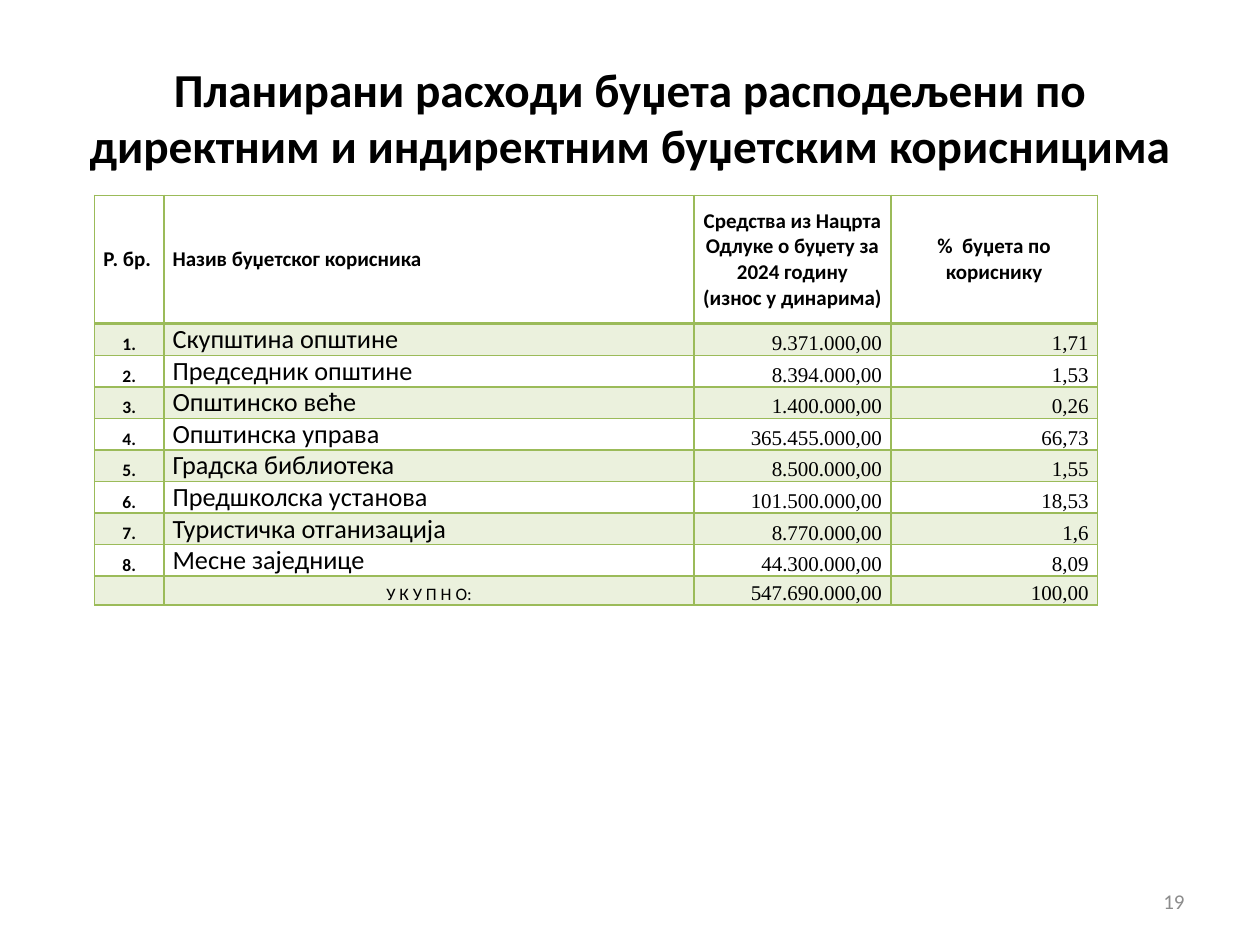
from lxml.etree import SubElement
from pptx import Presentation
from pptx.dml.color import RGBColor
from pptx.enum.text import MSO_ANCHOR, PP_ALIGN
from pptx.oxml.ns import qn
from pptx.util import Inches, Pt

BLACK = RGBColor(0, 0, 0)
GREY = RGBColor(0x8C, 0x8C, 0x8C)
GREEN = RGBColor(0x9B, 0xBB, 0x59)
BAND_ALPHA = 20

TITLE = "Планирани расходи буџета расподељени по директним и индиректним буџетским корисницима"
PAGE_NUMBER = "19"
HEADERS = [
    "Р. бр.",
    "Назив буџетског корисника",
    "Средства из Нацрта Одлуке о буџету за 2024 годину\v(износ у динарима)",
    "%  буџета по кориснику",
]
BENEFICIARIES = [
    ("Скупштина општине", "9.371.000,00", "1,71"),
    ("Председник општине", "8.394.000,00", "1,53"),
    ("Општинско веће", "1.400.000,00", "0,26"),
    ("Општинска управа", "365.455.000,00", "66,73"),
    ("Градска библиотека", "8.500.000,00", "1,55"),
    ("Предшколска установа", "101.500.000,00", "18,53"),
    ("Туристичка отганизација", "8.770.000,00", "1,6"),
    ("Месне заједнице", "44.300.000,00", "8,09"),
]
TOTAL = ("", "У К У П Н О:", "547.690.000,00", "100,00")

COLUMN_WIDTHS = [0.55, 4.21, 1.56, 1.64]
HEADER_HEIGHT, ROW_HEIGHT, TOTAL_HEIGHT = 1.02, 0.25, 0.23

LEFT, CENTER, RIGHT = PP_ALIGN.LEFT, PP_ALIGN.CENTER, PP_ALIGN.RIGHT
HEADER_ALIGNMENTS = [LEFT, LEFT, CENTER, CENTER]
BODY_ALIGNMENTS = [CENTER, LEFT, RIGHT, RIGHT]
TOTAL_ALIGNMENTS = [CENTER, CENTER, RIGHT, RIGHT]

TITLE_FONT = {"name": "Calibri", "size": Pt(27), "bold": True}
HEADER_FONT = {"name": "Calibri", "size": Pt(12), "bold": True}
NUMBER_FONT = {"name": "Calibri", "size": Pt(10), "bold": True}
NAME_FONT = {"name": "Calibri", "size": Pt(15), "bold": False}
AMOUNT_FONT = {"name": "Times New Roman", "size": Pt(12), "bold": False}
TOTAL_FONT = {"name": "Calibri", "size": Pt(10), "bold": False}
PAGE_FONT = {"name": "Calibri", "size": Pt(12), "bold": False}
BODY_FONTS = [NUMBER_FONT, NAME_FONT, AMOUNT_FONT, AMOUNT_FONT]
TOTAL_FONTS = [NUMBER_FONT, TOTAL_FONT, AMOUNT_FONT, AMOUNT_FONT]


def write_text(text_frame, text, font_format, alignment, color=BLACK):
    text_frame.word_wrap = True
    text_frame.text = text
    paragraph = text_frame.paragraphs[0]
    paragraph.alignment = alignment
    for run in paragraph.runs:
        for attribute, value in font_format.items():
            setattr(run.font, attribute, value)
        run.font.color.rgb = color
    if not text:
        size = str(int(font_format["size"].pt * 100))
        SubElement(paragraph._p, qn("a:endParaRPr"), sz=size)


def add_text(slide, box, text, font_format, alignment, color=BLACK):
    shape = slide.shapes.add_textbox(*(Inches(length) for length in box))
    shape.text_frame.vertical_anchor = MSO_ANCHOR.MIDDLE
    write_text(shape.text_frame, text, font_format, alignment, color)


def set_borders(cell, widths):
    properties = cell._tc.get_or_add_tcPr()
    for side, width in widths.items():
        line = SubElement(properties, qn(f"a:ln{side}"), w=str(Pt(width)))
        fill = SubElement(line, qn("a:solidFill"))
        SubElement(fill, qn("a:srgbClr"), val=str(GREEN))


def set_band(cell, banded):
    if not banded:
        cell.fill.background()
        return
    cell.fill.solid()
    cell.fill.fore_color.rgb = GREEN
    color = cell._tc.tcPr.find(f"{qn('a:solidFill')}/{qn('a:srgbClr')}")
    SubElement(color, qn("a:alpha"), val=str(BAND_ALPHA * 1000))


def add_budget_table(slide):
    rows = [(HEADERS, [HEADER_FONT] * 4, HEADER_ALIGNMENTS, HEADER_HEIGHT)]
    for number, beneficiary in enumerate(BENEFICIARIES, 1):
        rows.append(((f"{number}.", *beneficiary), BODY_FONTS, BODY_ALIGNMENTS, ROW_HEIGHT))
    rows.append((TOTAL, TOTAL_FONTS, TOTAL_ALIGNMENTS, TOTAL_HEIGHT))

    height = sum(row[-1] for row in rows)
    table = slide.shapes.add_table(
        len(rows), len(COLUMN_WIDTHS), Inches(0.75), Inches(1.55),
        Inches(sum(COLUMN_WIDTHS)), Inches(height),
    ).table
    for column, width in zip(table.columns, COLUMN_WIDTHS):
        column.width = Inches(width)

    for row_index, (texts, fonts, alignments, row_height) in enumerate(rows):
        table.rows[row_index].height = Inches(row_height)
        is_header = row_index == 0
        cell_format = {
            "margin_left": Inches(0.07),
            "margin_right": Inches(0.07),
            "margin_top": 0,
            "margin_bottom": 0,
            "vertical_anchor": MSO_ANCHOR.MIDDLE if is_header else MSO_ANCHOR.BOTTOM,
        }
        borders = {"L": 1, "R": 1, "T": 2 if row_index == 1 else 1, "B": 2 if is_header else 1}
        for column_index, content in enumerate(zip(texts, fonts, alignments)):
            cell = table.cell(row_index, column_index)
            for attribute, value in cell_format.items():
                setattr(cell, attribute, value)
            write_text(cell.text_frame, *content)
            set_borders(cell, borders)
            set_band(cell, row_index % 2 == 1)


def main():
    presentation = Presentation()
    presentation.slide_width = Inches(10)
    presentation.slide_height = Inches(7.5)
    slide = presentation.slides.add_slide(presentation.slide_layouts[6])
    add_text(slide, (0.5, 0.3, 9, 1.25), TITLE, TITLE_FONT, CENTER)
    add_budget_table(slide)
    add_text(slide, (7.17, 6.95, 2.33, 0.4), PAGE_NUMBER, PAGE_FONT, RIGHT, GREY)
    presentation.save("out.pptx")


if __name__ == "__main__":
    main()
